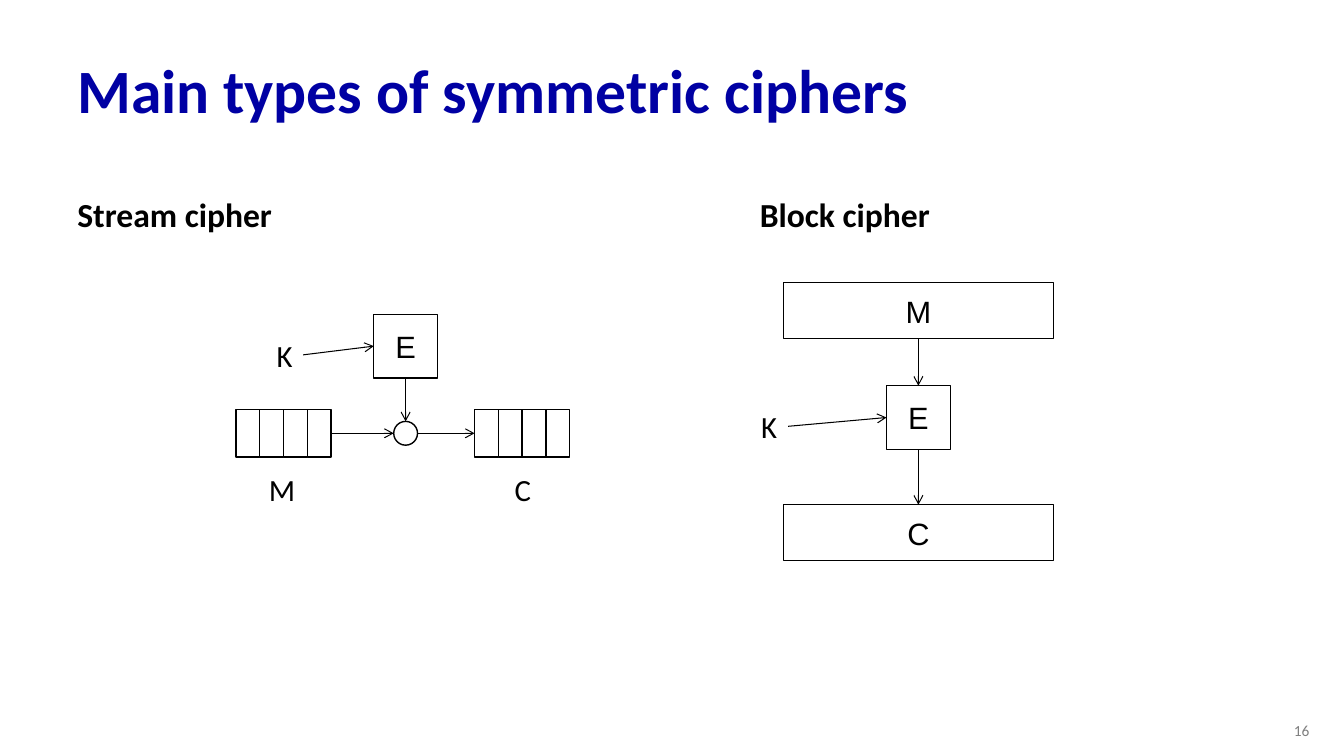
from pptx import Presentation
from pptx import util as u
from pptx.dml.color import RGBColor
from pptx.enum import shapes, text
from lxml import etree

Pt = u.Pt
NAVY = RGBColor(0x00, 0x00, 0xA3)
BLACK = RGBColor(0x00, 0x00, 0x00)
WHITE = RGBColor(0xFF, 0xFF, 0xFF)
GREY = RGBColor(0x80, 0x80, 0x80)
A = "{http://schemas.openxmlformats.org/drawingml/2006/main}"

CELLS, CELL_PITCH, CELL_HEIGHT = 4, 17, 34
E_SIDE = 45.5


def place(part, left, top, width, height):
    part.left, part.top, part.width, part.height = map(Pt, (left, top, width, height))


def write(frame, words, size, color=BLACK, font="Calibri", bold=False, align=None):
    paragraph = frame.paragraphs[0]
    paragraph.alignment = align
    run = paragraph.add_run()
    run.text = words
    run.font.size, run.font.name, run.font.bold = Pt(size), font, bold
    run.font.color.rgb = color
    return paragraph


def heading(placeholder, box, words, size, color, anchor):
    place(placeholder, *box)
    frame = placeholder.text_frame
    frame.auto_size = text.MSO_AUTO_SIZE.NONE
    frame.vertical_anchor = anchor
    paragraph = write(frame, words, size, color, bold=True, align=text.PP_ALIGN.LEFT)
    paragraph.line_spacing = 0.9
    return paragraph


def node(slide, left, top, width, height, letter="", kind=shapes.MSO_SHAPE.RECTANGLE):
    outline = slide.shapes.add_shape(kind, Pt(left), Pt(top), Pt(width), Pt(height))
    outline.shadow.inherit = False
    outline.fill.solid()
    outline.fill.fore_color.rgb = WHITE
    outline.line.color.rgb = BLACK
    outline.line.width = Pt(1)
    if letter:
        frame = outline.text_frame
        frame.vertical_anchor = text.MSO_ANCHOR.MIDDLE
        paragraph = write(frame, letter, 22, font="Arial", align=text.PP_ALIGN.CENTER)
        paragraph.space_before = Pt(4.4)


def label(slide, left, top, width, letter):
    caption = slide.shapes.add_textbox(Pt(left), Pt(top), Pt(width), Pt(34))
    caption.text_frame.word_wrap = False
    caption.text_frame.auto_size = text.MSO_AUTO_SIZE.SHAPE_TO_FIT_TEXT
    write(caption.text_frame, letter, 22)


def arrow(slide, x1, y1, x2, y2):
    flow = slide.shapes.add_connector(
        shapes.MSO_CONNECTOR.STRAIGHT, Pt(x1), Pt(y1), Pt(x2), Pt(y2))
    flow.line.color.rgb = BLACK
    flow.line.width = Pt(0.75)
    etree.SubElement(flow.line._get_or_add_ln(), A + "tailEnd", type="arrow")
    etree.SubElement(flow._element.spPr, A + "effectLst")


def stream_cipher(slide, left, top):
    encrypt_left, cells_top = left + 98.5, top + 68
    center = encrypt_left + E_SIDE / 2
    radius, middle = 8.5, cells_top + CELL_HEIGHT / 2
    cipher_left = left + 170.5
    # Message and ciphertext as rows of small cells
    for row_left in (left, cipher_left):
        for i in range(CELLS):
            node(slide, row_left + i * CELL_PITCH, cells_top, CELL_PITCH, CELL_HEIGHT)
    # Key stream generator and combining circle
    node(slide, encrypt_left, top, E_SIDE, E_SIDE, "E")
    node(slide, center - radius, middle - radius, 2 * radius, 2 * radius,
         kind=shapes.MSO_SHAPE.OVAL)
    # Flow
    arrow(slide, left + CELLS * CELL_PITCH, middle, center - radius, middle)
    arrow(slide, center + radius, middle, cipher_left, middle)
    arrow(slide, center, top + E_SIDE, center, middle - radius)
    arrow(slide, left + 48, top + 29, encrypt_left, top + E_SIDE / 2)
    # Letters
    label(slide, left + 22, top + 12.5, 26, "K")
    label(slide, left + 16.5, top + 108, 33, "M")
    label(slide, left + 192, top + 108, 26.5, "C")


def block_cipher(slide, left, top):
    block_left, block_width, block_height = left + 23, 193, 40
    center = block_left + block_width / 2
    encrypt_left, encrypt_top = center - E_SIDE / 2, top + 73.5
    cipher_top = top + 158.5
    # Message, encryption and ciphertext blocks
    node(slide, block_left, top, block_width, block_height, "M")
    node(slide, block_left, cipher_top, block_width, block_height, "C")
    node(slide, encrypt_left, encrypt_top, E_SIDE, E_SIDE, "E")
    # Flow
    arrow(slide, center, top + block_height, center, encrypt_top)
    arrow(slide, center, encrypt_top + E_SIDE, center, cipher_top)
    # Key
    label(slide, left, top + 86, 26, "K")
    arrow(slide, left + 26.5, top + 102.5, encrypt_left, encrypt_top + E_SIDE / 2)


def page_number(slide, left, top, width, height):
    number = slide.shapes.add_textbox(Pt(left), Pt(top), Pt(width), Pt(height))
    number.text_frame.word_wrap = True
    number.text_frame.vertical_anchor = text.MSO_ANCHOR.MIDDLE
    write(number.text_frame, "16", 11, GREY, align=text.PP_ALIGN.RIGHT)


def main():
    deck = Presentation()
    deck.slide_width, deck.slide_height = Pt(960), Pt(540)
    slide = deck.slides.add_slide(deck.slide_layouts[4])
    title, stream_head, stream_body, block_head, block_body = slide.placeholders
    for unused in (stream_body, block_body):
        unused._element.getparent().remove(unused._element)

    # Title and column headings
    heading(title, (48, 21.5, 864, 90), "Main types of symmetric ciphers", 44, NAVY,
            text.MSO_ANCHOR.MIDDLE)
    for head, left, width, words in ((stream_head, 48, 424, "Stream cipher"),
                                     (block_head, 535.5, 279, "Block cipher")):
        column = heading(head, (left, 121, width, 50.5), words, 24, BLACK,
                         text.MSO_ANCHOR.BOTTOM)
        column.space_before = Pt(10)

    # Diagrams
    stream_cipher(slide, 168.5, 224.5)
    block_cipher(slide, 536.5, 202)
    page_number(slide, 759, 507.5, 183.5, 29)
    deck.save("out.pptx")


if __name__ == "__main__":
    main()
